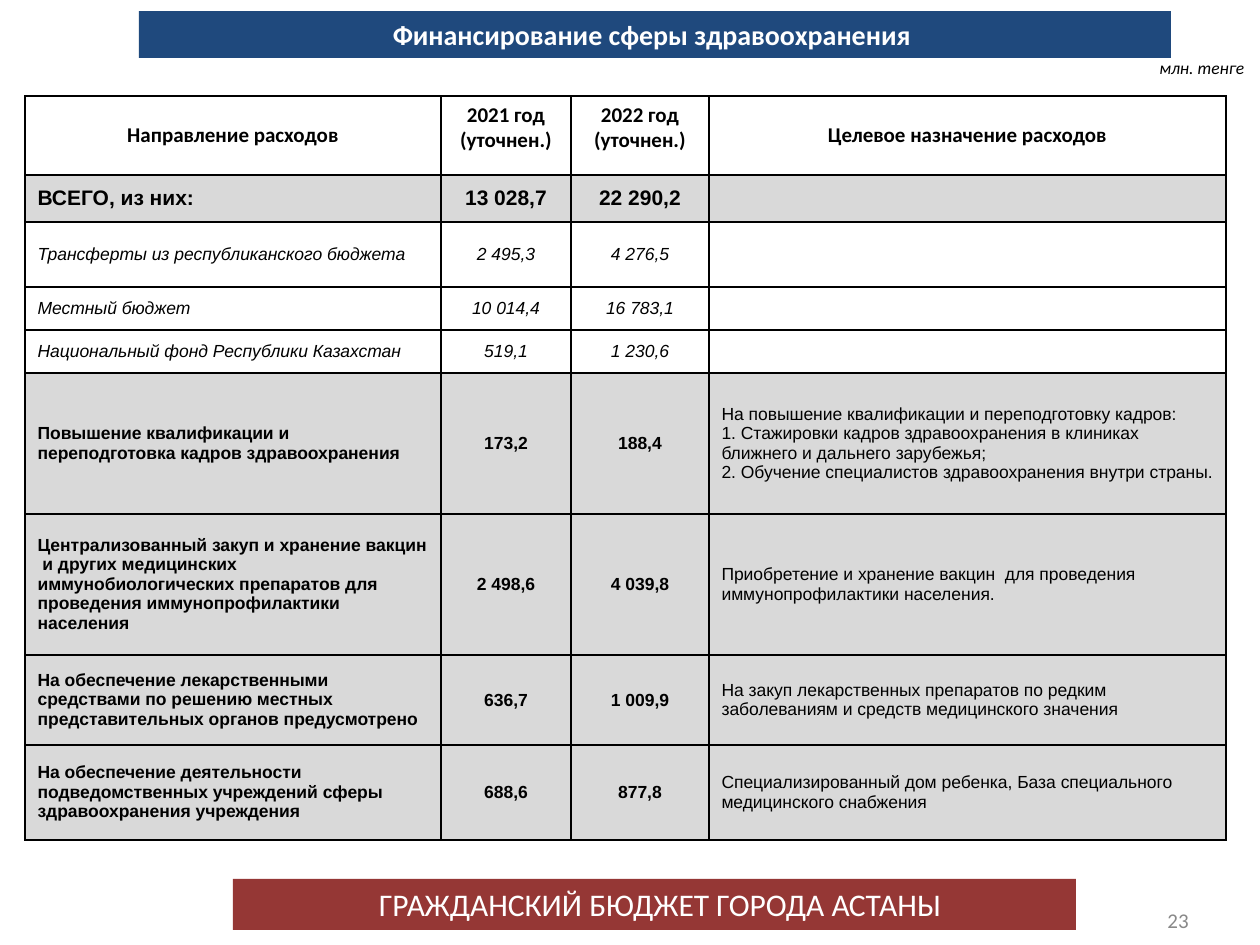
from lxml.etree import SubElement
from pptx import Presentation
from pptx.dml.color import RGBColor
from pptx.enum.shapes import MSO_SHAPE
from pptx.enum.text import MSO_ANCHOR, PP_ALIGN
from pptx.oxml import parse_xml
from pptx.oxml.ns import nsdecls, qn
from pptx.util import Emu, Pt

PIXELS_PER_INCH = 126
BLACK, WHITE, GREY = "000000", "FFFFFF", "D9D9D9"
LEFT, CENTER, RIGHT, JUSTIFY = (
    PP_ALIGN.LEFT, PP_ALIGN.CENTER, PP_ALIGN.RIGHT, PP_ALIGN.JUSTIFY)

COLUMN_WIDTHS = [416, 130, 138, 517]
ROW_HEIGHTS = [79, 47, 65, 43, 43, 141, 141, 90, 95]

# Text formats by role
HEADER = {"size": 12, "name": "Calibri", "bold": True}
TOTAL = {"size": 12, "name": "Arial", "bold": True}
SOURCE = {"size": 10, "name": "Arial", "italic": True}
EXPENSE = {"size": 10, "name": "Arial", "bold": True}
PURPOSE = {"size": 10, "name": "Arial"}

# Each row: format, fill, alignment of the first column, cell texts
ROWS = [
    (HEADER, WHITE, CENTER,
     ["Направление расходов", "2021 год (уточнен.)", "2022 год (уточнен.)",
      "Целевое назначение расходов"]),
    (TOTAL, GREY, JUSTIFY, ["ВСЕГО, из них:", "13 028,7", "22 290,2", ""]),
    (SOURCE, WHITE, JUSTIFY,
     ["Трансферты из республиканского бюджета", "2 495,3", "4 276,5", ""]),
    (SOURCE, WHITE, JUSTIFY, ["Местный бюджет", "10 014,4", "16 783,1", ""]),
    (SOURCE, WHITE, JUSTIFY,
     ["Национальный фонд Республики Казахстан", "519,1", "1 230,6", ""]),
    (EXPENSE, GREY, LEFT,
     ["Повышение квалификации и переподготовка кадров здравоохранения",
      "173,2", "188,4",
      "На повышение квалификации и переподготовку кадров:\n"
      "1. Стажировки кадров здравоохранения в клиниках ближнего и дальнего зарубежья;\n"
      "2. Обучение специалистов здравоохранения внутри страны."]),
    (EXPENSE, GREY, LEFT,
     ["Централизованный закуп и хранение вакцин  и других медицинских "
      "иммунобиологических препаратов для проведения иммунопрофилактики населения",
      "2 498,6", "4 039,8",
      "Приобретение и хранение вакцин  для проведения иммунопрофилактики населения."]),
    (EXPENSE, GREY, LEFT,
     ["На обеспечение лекарственными средствами по решению местных "
      "представительных органов предусмотрено",
      "636,7", "1 009,9",
      "На закуп лекарственных препаратов по редким  заболеваниям и средств "
      "медицинского значения"]),
    (EXPENSE, GREY, LEFT,
     ["На обеспечение деятельности подведомственных учреждений сферы "
      "здравоохранения учреждения",
      "688,6", "877,8",
      "Специализированный дом ребенка, База специального медицинского снабжения"]),
]


def px(length):
    return Emu(round(length * 914400 / PIXELS_PER_INCH))


def color(value):
    return RGBColor.from_string(value)


def write(frame, text, style, ink=BLACK, align=LEFT):
    for index, line in enumerate(text.split("\n")):
        para = frame.add_paragraph() if index else frame.paragraphs[0]
        para.alignment = align
        if not line:
            # Keeps an empty cell from growing its row
            SubElement(para._p, qn("a:endParaRPr"), sz=str(style["size"] * 100))
            continue
        span = para.add_run()
        span.text = line
        span.font.color.rgb = color(ink)
        for key, value in style.items():
            setattr(span.font, key, Pt(value) if key == "size" else value)


def add_bar(page, box, fill):
    bar = page.shapes.add_shape(MSO_SHAPE.RECTANGLE, *map(px, box))
    bar.shadow.inherit = False
    bar.fill.solid()
    bar.fill.fore_color.rgb = color(fill)
    bar.line.fill.background()
    return bar


def add_label(page, box, text, style, ink, align=LEFT, anchor=MSO_ANCHOR.TOP):
    frame = page.shapes.add_textbox(*map(px, box)).text_frame
    frame.word_wrap = True
    frame.vertical_anchor = anchor
    write(frame, text, style, ink, align)


def add_borders(cell):
    properties = cell._tc.get_or_add_tcPr()
    for index, side in enumerate(("lnL", "lnR", "lnT", "lnB")):
        properties.insert(index, parse_xml(
            f'<a:{side} {nsdecls("a")} w="12700"><a:solidFill>'
            f'<a:srgbClr val="{BLACK}"/></a:solidFill></a:{side}>'))


def add_header(page, left, top):
    bar = add_bar(page, (left, top, 1032, 47), "1F497D")
    bar.text_frame.vertical_anchor = MSO_ANCHOR.TOP
    bar.text_frame.word_wrap = True
    write(bar.text_frame, "Финансирование сферы здравоохранения ",
          {"size": 16, "name": "Calibri", "bold": True}, WHITE, CENTER)
    add_label(page, (left + 1008, top + 40, 137, 34), "млн. тенге",
              {"size": 10, "name": "Calibri", "italic": True}, BLACK)


def add_budget_table(page, left, top):
    box = (left, top, sum(COLUMN_WIDTHS), sum(ROW_HEIGHTS))
    table = page.shapes.add_table(
        len(ROWS), len(COLUMN_WIDTHS), *map(px, box)).table
    table.first_row = table.horz_banding = False
    for column, width in zip(table.columns, COLUMN_WIDTHS):
        column.width = px(width)
    for row, height in zip(table.rows, ROW_HEIGHTS):
        row.height = px(height)

    for row_index, (style, fill, first_align, texts) in enumerate(ROWS):
        last_align = CENTER if style is HEADER else LEFT
        alignments = [first_align, CENTER, CENTER, last_align]
        for column_index, (text, align) in enumerate(zip(texts, alignments)):
            cell = table.cell(row_index, column_index)
            is_number = column_index in (1, 2)
            is_purpose = column_index == 3 and style is EXPENSE
            write(cell.text_frame, text, PURPOSE if is_purpose else style,
                  align=align)
            top_anchored = style is HEADER and is_number
            cell.vertical_anchor = (
                MSO_ANCHOR.TOP if top_anchored else MSO_ANCHOR.MIDDLE)
            if is_number and row_index >= len(ROWS) - 2:
                cell.margin_left = cell.margin_right = cell.margin_top = px(1)
                cell.margin_bottom = 0
            cell.fill.solid()
            cell.fill.fore_color.rgb = color(fill)
            add_borders(cell)


def add_footer(page, left, top):
    add_bar(page, (left, top, 843, 51), "953735")
    add_label(page, (left + 40, top, 774, 51),
              "ГРАЖДАНСКИЙ БЮДЖЕТ ГОРОДА АСТАНЫ",
              {"size": 18, "name": "Calibri"}, WHITE, CENTER)
    add_label(page, (left + 674, top + 16, 294, 50), "23",
              {"size": 12, "name": "Calibri"}, "898989", RIGHT,
              MSO_ANCHOR.MIDDLE)


def main():
    deck = Presentation()
    deck.slide_width, deck.slide_height = px(1260), px(945)
    page = deck.slides.add_slide(deck.slide_layouts[6])
    add_budget_table(page, 25, 96)
    add_header(page, 139, 11)
    add_footer(page, 233, 879)
    deck.save("out.pptx")


if __name__ == "__main__":
    main()
